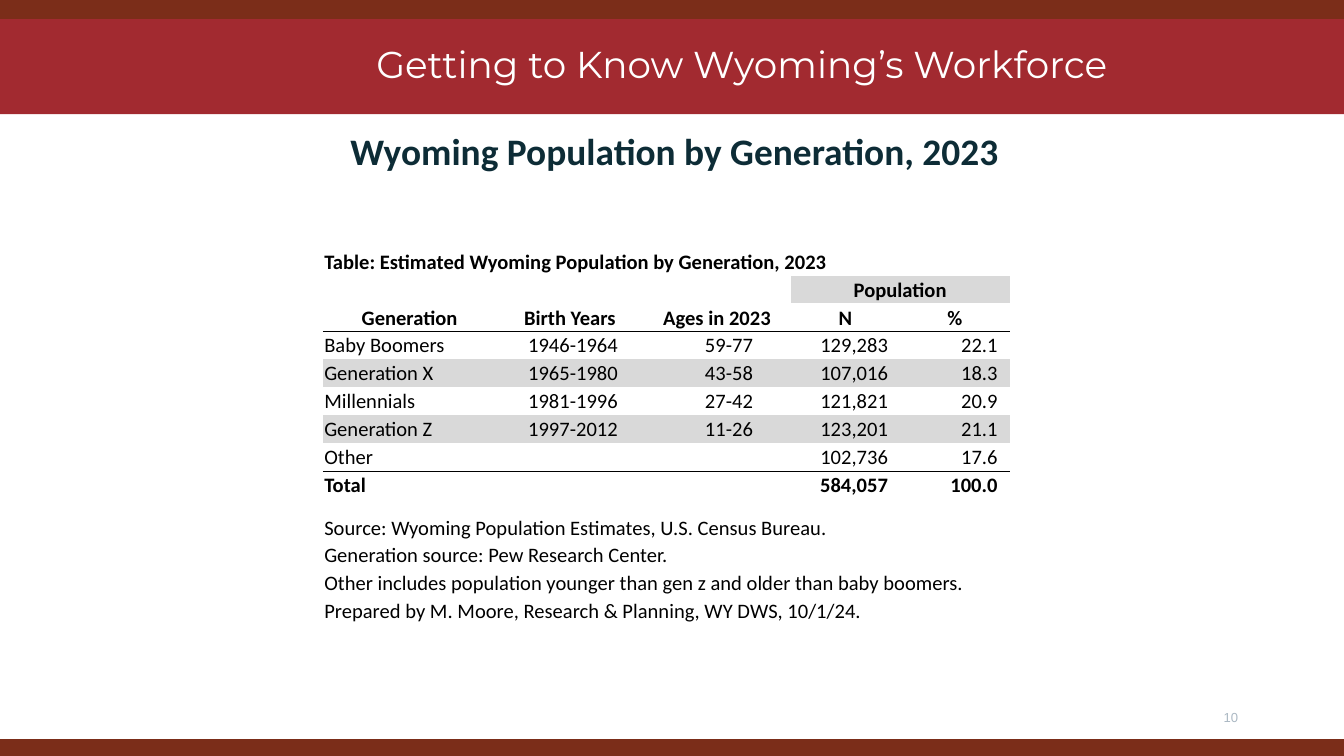
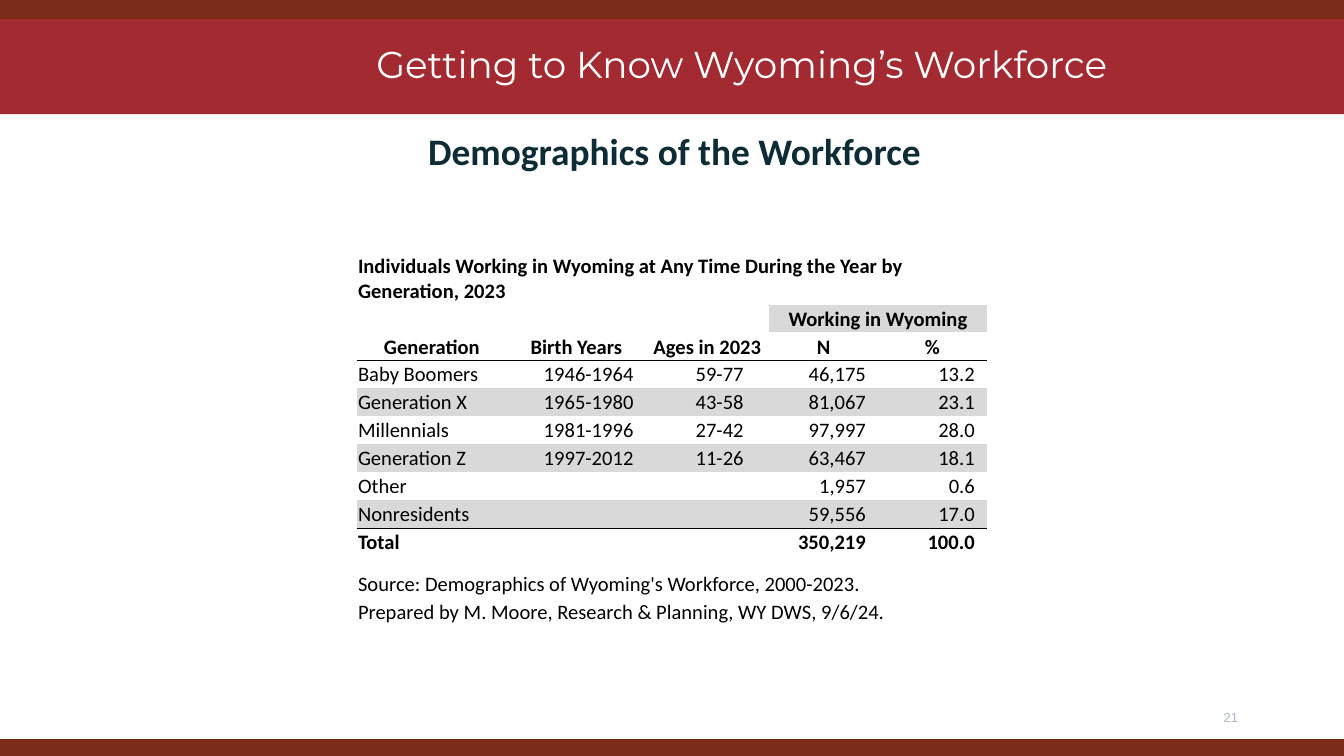
from dataclasses import dataclass

from lxml.etree import SubElement
from pptx import Presentation
from pptx.dml.color import RGBColor
from pptx.enum.shapes import MSO_SHAPE
from pptx.enum.text import MSO_ANCHOR, MSO_AUTO_SIZE, PP_ALIGN
from pptx.oxml import parse_xml
from pptx.oxml.ns import nsdecls, qn
from pptx.util import Inches, Pt

PLAIN_TABLE_STYLE = "{2D5ABB26-0587-4C30-8999-92F81FD0307C}"
DECK_TITLE = "Getting to Know Wyoming’s Workforce"


@dataclass(frozen=True)
class Theme:
    brown: str = "7B2D19"
    red: str = "A22A30"
    white: str = "FFFFFF"
    navy: str = "0D2C36"
    pale: str = "ABB8C3"
    black: str = "000000"
    stripe: str = "D9D9D9"
    title_font: str = "Montserrat"
    body_font: str = "Calibri"
    number_font: str = "Arial"
    title_size: float = 20
    table_size: float = 11
    number_size: float = 7
    rule_width: float = 0.5


def grid(steps):
    """Turn grid steps into a length; a slide is 100 columns by 56.25 rows."""
    return Inches(steps / 10)


def write_text(frame, text, *, font, size, color, bold=False,
               align=PP_ALIGN.LEFT, line_spacing=None):
    para = frame.paragraphs[0]
    para.alignment = align
    if line_spacing:
        para.line_spacing = line_spacing
    span = para.add_run()
    span.text = text
    span.font.name = font
    span.font.size = Pt(size)
    span.font.bold = bold
    span.font.color.rgb = RGBColor.from_string(color)
    return para


class DeckBuilder:
    def __init__(self, theme):
        self.theme = theme
        self.deck = Presentation()
        self.deck.slide_width = grid(100)
        self.deck.slide_height = grid(56.25)
        self.page = None

    def start_page(self, heading, number):
        """Add a page with its bands, title, heading and page number."""
        theme = self.theme
        self.page = self.deck.slides.add_slide(self.deck.slide_layouts[6])
        self.band(-0.2, 8.7, theme.red)
        self.band(-0.2, 1.62, theme.brown)
        self.band(55, 1.9, theme.brown)
        self.text((16.2, 1.6, 78, 5.8), DECK_TITLE, anchor=MSO_ANCHOR.BOTTOM,
                  font=theme.title_font, size=theme.title_size,
                  color=theme.white, align=PP_ALIGN.CENTER)
        para = self.text((2.72, 8.54, 93.7, 42.7), heading,
                         font=theme.body_font, size=theme.title_size,
                         color=theme.navy, bold=True, align=PP_ALIGN.CENTER)
        properties = para._p.get_or_add_pPr()
        properties.set("marL", str(grid(5)))
        properties.set("indent", str(grid(-3.75)))
        self.text((70.6, 52, 22.5, 3), str(number), anchor=MSO_ANCHOR.MIDDLE,
                  font=theme.number_font, size=theme.number_size,
                  color=theme.pale, align=PP_ALIGN.RIGHT, line_spacing=0.8)

    def band(self, top, height, color):
        box = self.page.shapes.add_shape(
            MSO_SHAPE.RECTANGLE, grid(-0.2), grid(top), grid(100.5), grid(height))
        box.shadow.inherit = False
        box.fill.solid()
        box.fill.fore_color.rgb = RGBColor.from_string(color)
        box.line.fill.background()

    def text(self, place, text, anchor=MSO_ANCHOR.TOP, **style):
        box = self.page.shapes.add_textbox(*map(grid, place))
        frame = box.text_frame
        frame.word_wrap = True
        frame.auto_size = MSO_AUTO_SIZE.NONE
        frame.vertical_anchor = anchor
        frame.margin_left = frame.margin_right = grid(1)
        frame.margin_top = frame.margin_bottom = grid(1)
        return write_text(frame, text, **style)

    def rule(self, cell, side):
        """Draw a line on side "T" or "B" of a cell and clear the other side."""
        theme = self.theme
        properties = cell._tc.get_or_add_tcPr()
        for place, edge in enumerate("TB"):
            paint = "<a:noFill/>"
            if edge == side:
                paint = (f'<a:solidFill><a:srgbClr val="{theme.black}"/>'
                         '</a:solidFill>')
            properties.insert(place, parse_xml(
                f'<a:ln{edge} {nsdecls("a")} w="{Pt(theme.rule_width)}">'
                f'{paint}</a:ln{edge}>'))

    def cell(self, cell, text="", *, inset=0.1, anchor=MSO_ANCHOR.BOTTOM,
             shaded=False, rule=None, bold=False, align=PP_ALIGN.LEFT):
        theme = self.theme
        cell.margin_left = cell.margin_top = grid(0.1)
        cell.margin_right, cell.margin_bottom = grid(inset), 0
        cell.vertical_anchor = anchor
        if shaded:
            cell.fill.solid()
            cell.fill.fore_color.rgb = RGBColor.from_string(theme.stripe)
        else:
            cell.fill.background()
        if rule:
            self.rule(cell, rule)
        if text:
            write_text(cell.text_frame, text, font=theme.body_font,
                       size=theme.table_size, color=theme.black,
                       bold=bold, align=align)
        else:
            # An empty cell keeps the table's type size so its row stays low.
            SubElement(cell.text_frame.paragraphs[0]._p, qn("a:endParaRPr"),
                       sz=str(theme.table_size * 100))

    def table(self, left, top, columns, insets, caption, group, body, notes,
              caption_height=2.08):
        """Add a generation table; body ends with its total, notes are (text, span)."""
        heights = [caption_height] + [2.08] * (2 + len(body)) + [3.1]
        heights += [2.08] * (len(notes) - 1)
        table = self.page.shapes.add_table(
            len(heights), len(columns), grid(left), grid(top),
            grid(sum(columns)), grid(sum(heights))).table
        table.first_row = table.horz_banding = False
        table._tbl.tblPr.find(qn("a:tableStyleId")).text = PLAIN_TABLE_STYLE
        for column, width in zip(table.columns, columns):
            column.width = grid(width)
        for row, height in zip(table.rows, heights):
            row.height = grid(height)

        def fill_row(row, texts, span=1, **style):
            for index in range(len(columns)):
                text = texts[index] if index < len(texts) else ""
                self.cell(table.cell(row, index), text, **style)
            if span > 1:
                table.cell(row, 0).merge(table.cell(row, span - 1))

        fill_row(0, [caption], span=5, bold=True)
        for index, text in enumerate(("", "", "", group, "")):
            self.cell(table.cell(1, index), text, shaded=index >= 3, bold=True,
                      align=PP_ALIGN.CENTER)
        table.cell(1, 3).merge(table.cell(1, 4))
        fill_row(2, ["Generation", "Birth Years", "Ages in 2023", "N", "%"],
                 rule="B", bold=True, align=PP_ALIGN.CENTER)

        total = len(body) - 1
        rules = {0: "T", total - 1: "B", total: "T"}
        for number, texts in enumerate(body):
            for index, (text, inset) in enumerate(zip(texts, insets)):
                self.cell(table.cell(3 + number, index), text, inset=inset,
                          anchor=MSO_ANCHOR.TOP, rule=rules.get(number),
                          shaded=number % 2 == 1 and number < total,
                          bold=number == total,
                          align=PP_ALIGN.RIGHT if index else PP_ALIGN.LEFT)
        for row, (note, span) in enumerate(notes, start=3 + len(body)):
            fill_row(row, [note], span=span)


GENERATIONS = [
    ("Baby Boomers", "1946-1964", "59-77"),
    ("Generation X", "1965-1980", "43-58"),
    ("Millennials", "1981-1996", "27-42"),
    ("Generation Z", "1997-2012", "11-26"),
    ("Other", "", ""),
    ("Nonresidents", "", ""),
]
TOTAL = ("Total", "", "")


def table_body(counts, shares):
    """Join row labels with their counts and shares, the total last."""
    labels = GENERATIONS[:len(counts) - 1] + [TOTAL]
    return [(*label, count, share)
            for label, count, share in zip(labels, counts, shares)]


def main():
    builder = DeckBuilder(Theme())

    builder.start_page("Wyoming Population by Generation, 2023", 10)
    builder.table(
        24.03, 18.42, columns=(12.9, 10.95, 10.95, 8.15, 8.15),
        insets=(0.1, 1.9, 2.8, 0.9, 0.9),
        caption="Table: Estimated Wyoming Population by Generation, 2023",
        group="Population",
        body=table_body(
            ("129,283", "107,016", "121,821", "123,201", "102,736", "584,057"),
            ("22.1", "18.3", "20.9", "21.1", "17.6", "100.0")),
        notes=[
            ("Source: Wyoming Population Estimates, U.S. Census Bureau.", 5),
            ("Generation source: Pew Research Center.", 3),
            ("Other includes population younger than gen z and older than "
             "baby boomers.", 5),
            ("Prepared by M. Moore, Research & Planning, WY DWS, 10/1/24.", 5),
        ])

    builder.start_page("Demographics of the Workforce", 21)
    builder.table(
        26.54, 18.3, columns=(11.2, 10.3, 9.2, 8.1, 8.1),
        insets=(0.1, 0.9, 1.9, 0.9, 0.9), caption_height=4.36,
        caption="Individuals Working in Wyoming at Any Time During the Year "
                "by Generation, 2023",
        group="Working in Wyoming",
        body=table_body(
            ("46,175", "81,067", "97,997", "63,467", "1,957", "59,556", "350,219"),
            ("13.2", "23.1", "28.0", "18.1", "0.6", "17.0", "100.0")),
        notes=[
            ("Source: Demographics of Wyoming's Workforce, 2000-2023.", 5),
            ("Prepared by M. Moore, Research & Planning, WY DWS, 9/6/24.", 5),
        ])

    builder.deck.save("out.pptx")


if __name__ == "__main__":
    main()
